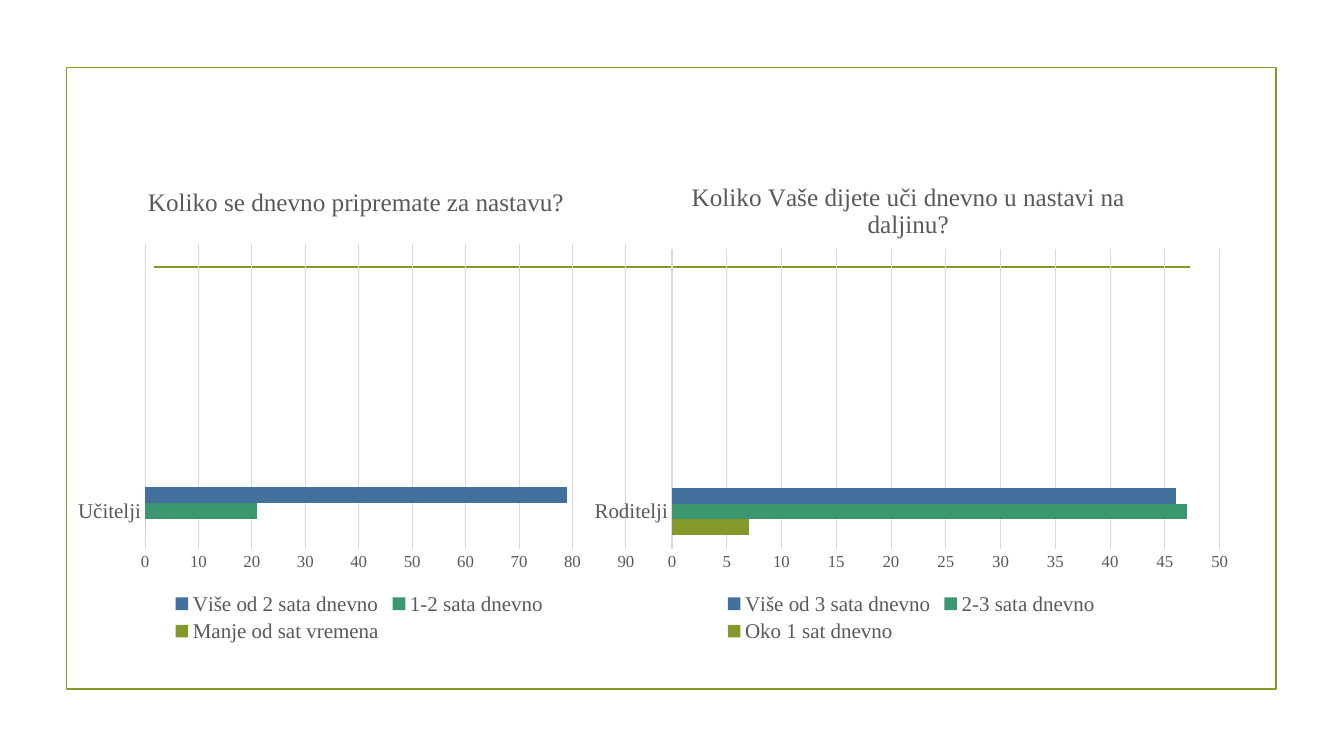
import dataclasses

import lxml.etree
import pptx
import pptx.chart.data
import pptx.dml.color
import pptx.enum.chart
import pptx.enum.shapes
import pptx.oxml.ns
import pptx.util
from pptx.util import Cm


@dataclasses.dataclass(frozen=True)
class Theme:
    font: str = "Times New Roman"
    olive: str = "83992A"
    green: str = "3C9770"
    blue: str = "44709D"
    grid: str = "D9D9D9"
    text: str = "595959"
    background: str = "FFFFFF"
    title_size: float = 18
    label_size: float = 15
    tick_size: float = 12
    frame_line: float = 1.25
    chart_line: float = 0.75


def colour(value):
    return pptx.dml.color.RGBColor.from_string(value)


def set_layout(parent, index, **fractions):
    for old in parent.findall(pptx.oxml.ns.qn("c:layout")):
        parent.remove(old)
    layout = lxml.etree.Element(pptx.oxml.ns.qn("c:layout"))
    manual = lxml.etree.SubElement(layout, pptx.oxml.ns.qn("c:manualLayout"))
    settings = {"xMode": "edge", "yMode": "edge", **fractions}
    if "w" in fractions:
        settings = {"layoutTarget": "inner", **settings}
    for name, value in settings.items():
        lxml.etree.SubElement(manual, pptx.oxml.ns.qn("c:" + name)).set("val", str(value))
    parent.insert(index, layout)


class SlideBuilder:
    def __init__(self, slide, theme):
        self.slide = slide
        self.theme = theme
        slide.background.fill.solid()
        slide.background.fill.fore_color.rgb = colour(theme.background)

    def style_line(self, line, shade, width):
        line.color.rgb = colour(shade)
        line.width = pptx.util.Pt(width)

    def style_font(self, font, size):
        font.name = self.theme.font
        font.size = pptx.util.Pt(size)
        font.bold = False
        font.color.rgb = colour(self.theme.text)

    def frame(self, left, top, width, height):
        box = self.slide.shapes.add_shape(
            pptx.enum.shapes.MSO_SHAPE.RECTANGLE, left, top, width, height)
        box.shadow.inherit = False
        box.fill.background()
        self.style_line(box.line, self.theme.olive, self.theme.frame_line)

    def rule(self, left, right, top):
        rule = self.slide.shapes.add_connector(
            pptx.enum.shapes.MSO_CONNECTOR.STRAIGHT, left, top, right, top)
        self.style_line(rule.line, self.theme.olive, self.theme.frame_line)
        lxml.etree.SubElement(rule._element.spPr, pptx.oxml.ns.qn("a:effectLst"))

    def bar_chart(self, place, title, title_at, plot_at, category, answers, top_value, step):
        data = pptx.chart.data.CategoryChartData()
        data.categories = [category, "", "", ""]
        for name, value in answers:
            data.add_series(name, [value, None, None, None])
        chart = self.slide.shapes.add_chart(
            pptx.enum.chart.XL_CHART_TYPE.BAR_CLUSTERED, *place, data).chart
        self.style_font(chart.font, self.theme.label_size)

        chart.has_title = True
        chart.chart_title.text_frame.text = title
        for span in chart.chart_title.text_frame.paragraphs[0].runs:
            self.style_font(span.font, self.theme.title_size)
        chart.chart_title.include_in_layout = False
        set_layout(chart.chart_title._element, 1, **title_at)
        set_layout(chart._chartSpace.chart.plotArea, 0, **plot_at)

        plot = chart.plots[0]
        plot.gap_width = 182
        plot.overlap = 0
        plot.vary_by_categories = False
        shades = (self.theme.olive, self.theme.green, self.theme.blue)
        for series, shade in zip(plot.series, shades):
            series.format.fill.solid()
            series.format.fill.fore_color.rgb = colour(shade)
            series.invert_if_negative = False

        for axis, size in ((chart.category_axis, self.theme.label_size),
                           (chart.value_axis, self.theme.tick_size)):
            axis.major_tick_mark = pptx.enum.chart.XL_TICK_MARK.NONE
            axis.minor_tick_mark = pptx.enum.chart.XL_TICK_MARK.NONE
            self.style_font(axis.tick_labels.font, size)
        self.style_line(chart.category_axis.format.line, self.theme.grid, self.theme.chart_line)
        values = chart.value_axis
        values.minimum_scale, values.maximum_scale, values.major_unit = 0, top_value, step
        values.format.line.fill.background()
        values.has_major_gridlines = True
        self.style_line(values.major_gridlines.format.line, self.theme.grid, self.theme.chart_line)

        chart.has_legend = True
        chart.legend.position = pptx.enum.chart.XL_LEGEND_POSITION.BOTTOM
        chart.legend.include_in_layout = False
        self.style_font(chart.legend.font, self.theme.label_size)


def main():
    deck = pptx.Presentation()
    deck.slide_width, deck.slide_height = Cm(33.87), Cm(19.05)
    page = SlideBuilder(deck.slides.add_slide(deck.slide_layouts[6]), Theme())
    page.frame(Cm(1.68), Cm(1.7), Cm(30.48), Cm(15.67))
    page.rule(Cm(3.89), Cm(30), Cm(6.73))

    chart_top, chart_height = Cm(3.96), Cm(12.34)
    page.bar_chart(
        (Cm(1.7), chart_top, Cm(14.71), chart_height),
        "Koliko se dnevno pripremate za nastavu?",
        {"x": 0.13, "y": 0.05},
        {"x": 0.133, "y": 0.177, "w": 0.824, "h": 0.623},
        "Učitelji",
        [("Manje od sat vremena", 0), ("1-2 sata dnevno", 21), ("Više od 2 sata dnevno", 79)],
        90, 10)
    page.bar_chart(
        (Cm(14.66), chart_top, Cm(16.61), chart_height),
        "Koliko Vaše dijete uči dnevno u nastavi na daljinu?",
        {"x": 0.16, "y": 0.04},
        {"x": 0.137, "y": 0.188, "w": 0.831, "h": 0.612},
        "Roditelji",
        [("Oko 1 sat dnevno", 7), ("2-3 sata dnevno", 47), ("Više od 3 sata dnevno", 46)],
        50, 5)
    deck.save("out.pptx")


if __name__ == "__main__":
    main()
